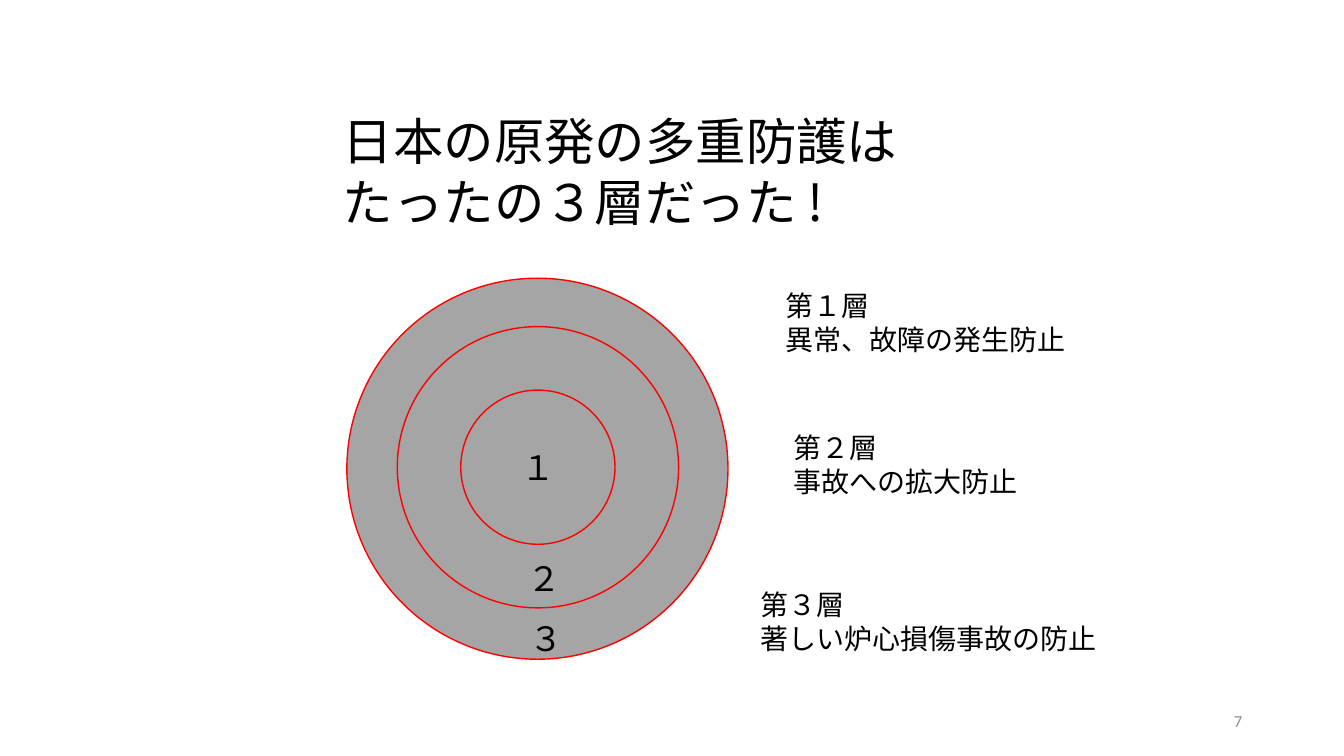
from lxml.etree import SubElement
from pptx import Presentation
from pptx.dml.color import RGBColor
from pptx.enum.shapes import MSO_SHAPE as Shape
from pptx.enum.text import MSO_ANCHOR as Anchor, PP_ALIGN as Align
from pptx.oxml.ns import qn
from pptx.util import Emu, Pt

BLACK = RGBColor(0x00, 0x00, 0x00)
GRAY = RGBColor(0xA5, 0xA5, 0xA5)
PALE = RGBColor(0x8C, 0x8C, 0x8C)
RED = RGBColor(0xFF, 0x00, 0x00)
LATIN = "Calibri"
JAPANESE = "Noto Sans CJK JP"
LEADING = 1.21


def px(*lengths):
    """Turn lengths at 100 px to the inch into EMU."""
    return [Emu(length * 9144) for length in lengths]


def write(shape, lines, size, font=LATIN, color=BLACK, align=Align.LEFT,
          anchor=Anchor.TOP, wrap=False):
    """Fill a shape with one paragraph for each line."""
    frame = shape.text_frame
    frame.word_wrap = wrap
    frame.vertical_anchor = anchor
    for index, line in enumerate(lines):
        para = frame.add_paragraph() if index else frame.paragraphs[0]
        para.alignment = align
        span = para.add_run()
        span.text = line
        span.font.size = Pt(size)
        span.font.name = font
        span.font.color.rgb = color
        if font == JAPANESE:
            para.line_spacing = Pt(round(size * LEADING, 1))
            SubElement(span.font._element, qn("a:ea"), typeface=font)


def add_text(page, box, lines, size, **style):
    write(page.shapes.add_textbox(*px(*box)), lines, size, **style)


def add_title(page, box):
    title = page.shapes.title
    title.left, title.top, title.width, title.height = px(*box)
    write(title, ["日本の原発の多重防護は", "たったの３層だった !"], 36,
          font=JAPANESE, wrap=True)


def add_rings(page, box):
    """Draw three concentric layers, numbered from the core outwards."""
    left, top, side = box
    center_x = left + side // 2
    for offset, diameter in ((0, side), (48, 279), (111, 153)):
        ring = page.shapes.add_shape(
            Shape.OVAL,
            *px(center_x - diameter // 2, top + offset, diameter, diameter))
        ring.shadow.inherit = False
        ring.fill.solid()
        ring.fill.fore_color.rgb = GRAY
        ring.line.color.rgb = RED
        ring.line.width = Pt(1)
    write(ring, ["１"], 24, align=Align.CENTER, anchor=Anchor.MIDDLE, wrap=True)
    for number, x, y in (("２", 169, 273), ("３", 171, 332)):
        add_text(page, (left + x, top + y, 43, 50), [number], 24,
                 align=Align.CENTER)


def add_layer_labels(page, box):
    left, top = box
    labels = (
        (25, 0, 301, "第１層", "異常、故障の発生防止"),
        (33, 141, 245, "第２層", "事故への拡大防止"),
        (0, 297, 357, "第３層", "著しい炉心損傷事故の防止"),
    )
    for x, y, width, *lines in labels:
        add_text(page, (left + x, top + y, width, 77), lines, 20, font=JAPANESE)


def main():
    deck = Presentation()
    deck.slide_width, deck.slide_height = px(1333, 750)
    page = deck.slides.add_slide(deck.slide_layouts.get_by_name("Title Only"))
    add_rings(page, (344, 276, 378))
    add_title(page, (330, 104, 690, 192))
    add_layer_labels(page, (744, 281))
    add_text(page, (942, 695, 300, 40), ["7"], 12, color=PALE,
             align=Align.RIGHT, anchor=Anchor.MIDDLE, wrap=True)
    deck.save("out.pptx")


if __name__ == "__main__":
    main()
